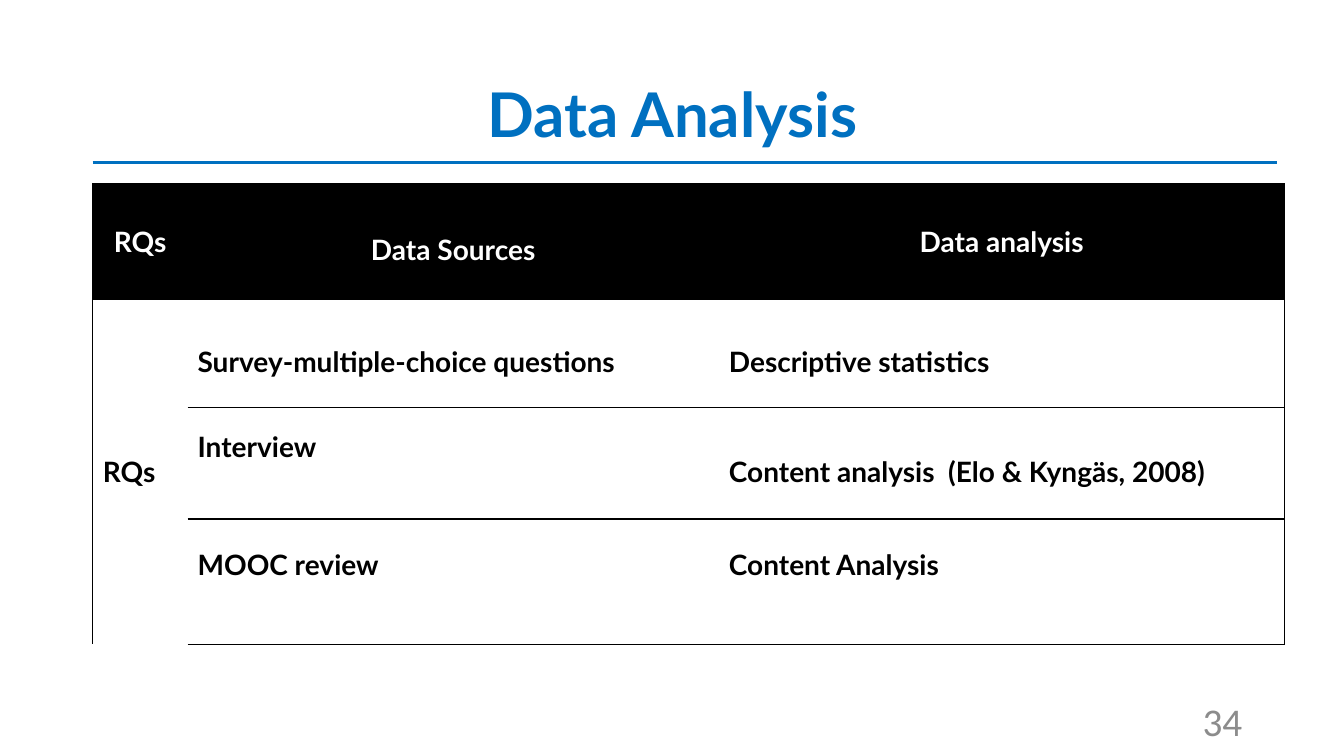
import pptx
import pptx.util
import pptx.dml.color
import pptx.enum.shapes
import pptx.enum.text
import pptx.oxml.ns
import lxml.etree

Inches = pptx.util.Inches
Pt = pptx.util.Pt
Align = pptx.enum.text.PP_ALIGN
MIDDLE = pptx.enum.text.MSO_ANCHOR.MIDDLE
qn = pptx.oxml.ns.qn


def color(value):
    return pptx.dml.color.RGBColor.from_string(value)


def write(frame, text, size, font, tint, bold, align, space=1.0):
    frame.word_wrap = True
    frame.vertical_anchor = MIDDLE
    para = frame.paragraphs[0]
    para.text = text
    para.alignment = align
    para.line_spacing = space
    para.font.size = Pt(size)
    para.font.name = font
    para.font.bold = bold
    para.font.color.rgb = color(tint)


deck = pptx.Presentation()
deck.slide_width = Inches(13.33)
deck.slide_height = Inches(7.5)
slide = deck.slides.add_slide(deck.slide_layouts[6])
shapes = slide.shapes

title = shapes.add_textbox(Inches(0.92), Inches(0.44), Inches(11.5), Inches(1.45))
write(title.text_frame, "Data Analysis", 44, "Lato", "0070C0", True, Align.CENTER, 0.9)

rule = shapes.add_connector(
    pptx.enum.shapes.MSO_CONNECTOR.STRAIGHT,
    Inches(0.92), Inches(1.61), Inches(12.67), Inches(1.61))
rule.line.color.rgb = color("0070C0")
rule.line.width = Pt(2)
lxml.etree.SubElement(rule._element.spPr, qn("a:effectLst"))

number = shapes.add_textbox(Inches(9.42), Inches(6.95), Inches(3), Inches(0.4))
write(number.text_frame, "34", 28, "Calibri", "8C8C8C", False, Align.RIGHT)

rows = [
    ["RQs", "Data Sources", "Data analysis"],
    ["RQs", "Survey-multiple-choice questions", "Descriptive statistics"],
    ["", "Interview", "Content analysis  (Elo & Kyngäs, 2008)"],
    ["", "MOOC review", "Content Analysis"],
]
widths = [0.94, 5.27, 5.61]
heights = [1.15, 1.07, 1.11, 1.24]
raised = ["Interview", "MOOC review", "Content Analysis"]

table = shapes.add_table(
    len(rows), len(widths), Inches(0.92), Inches(1.82),
    Inches(sum(widths)), Inches(sum(heights))).table
for column, width in zip(table.columns, widths):
    column.width = Inches(width)
for row, height in zip(table.rows, heights):
    row.height = Inches(height)
table.cell(1, 0).merge(table.cell(3, 0))

for r, texts in enumerate(rows):
    for c, text in enumerate(texts):
        cell = table.cell(r, c)
        head = r == 0
        borders = {
            "a:lnL": 0.5 if c == 0 else 0,
            "a:lnR": 1 if c == 2 else 0,
            "a:lnT": 0.5 if r < 2 else 1 if c else 0,
            "a:lnB": 0.5 if r in (0, 3) else 1 if c else 0,
        }
        props = cell._tc.get_or_add_tcPr()
        for side, weight in borders.items():
            edge = lxml.etree.SubElement(props, qn(side), w=str(Pt(weight)))
            if weight:
                paint = lxml.etree.SubElement(edge, qn("a:solidFill"))
                lxml.etree.SubElement(paint, qn("a:srgbClr"), val="000000")
            else:
                lxml.etree.SubElement(edge, qn("a:noFill"))
        cell.fill.solid()
        cell.fill.fore_color.rgb = color("000000" if head else "FFFFFF")
        cell.vertical_anchor = MIDDLE
        if text in raised:
            cell.margin_bottom = Inches(0.55)
        if text:
            loose = c == 1 or (c == 2 and not head)
            write(cell.text_frame, text, 20, "Lato",
                  "FFFFFF" if head else "000000", True,
                  Align.CENTER if head else Align.LEFT, 1.5 if loose else 1.0)

deck.save("out.pptx")
